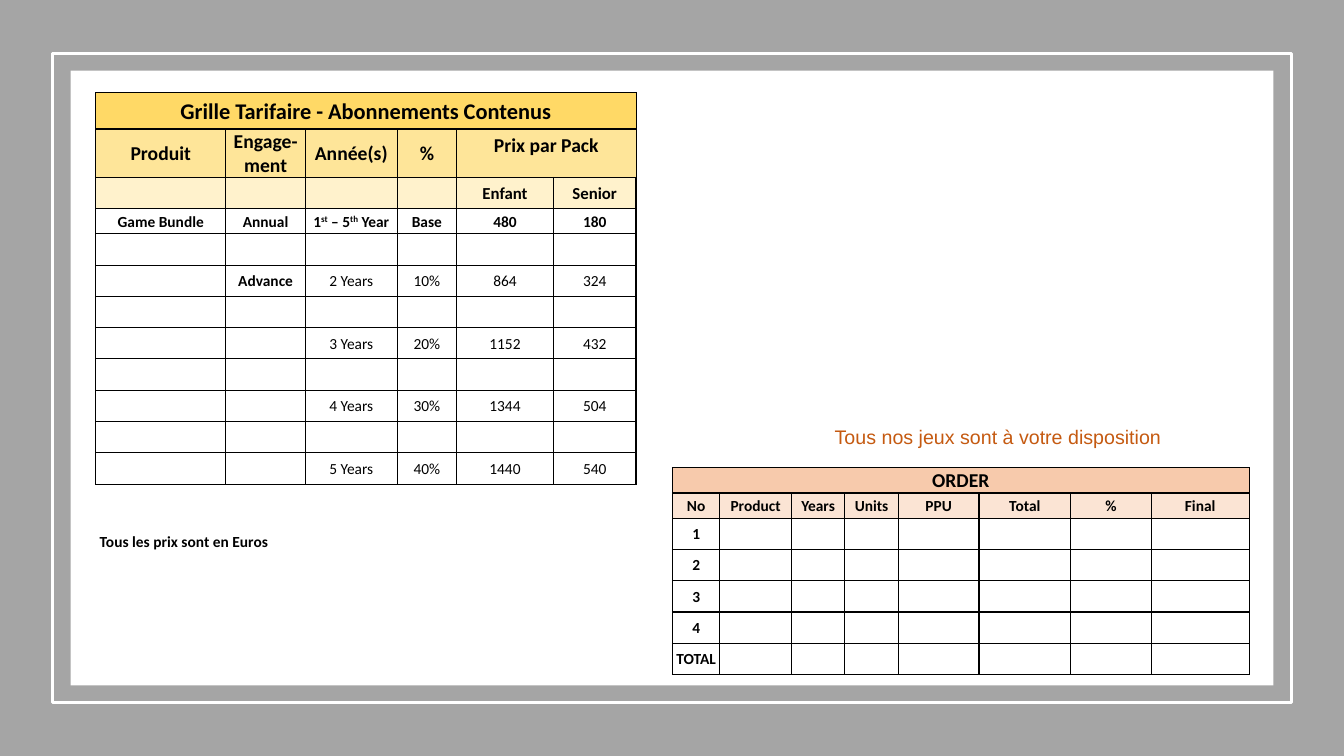
"""Build a slide with a price grid, an order form and two short notes."""
from lxml import etree
from pptx import Presentation
from pptx.dml.color import RGBColor
from pptx.enum.shapes import MSO_SHAPE
from pptx.enum.text import MSO_ANCHOR, PP_ALIGN
from pptx.oxml.ns import qn
from pptx.util import Inches, Pt

RECT = MSO_SHAPE.RECTANGLE
LEFT, MID = PP_ALIGN.LEFT, PP_ALIGN.CENTER
TOP, CENTER = MSO_ANCHOR.TOP, MSO_ANCHOR.MIDDLE
WIDE, HIGH = 13.33, 7.5
HUES = {
    "gray": "A5A5A5", "white": "FFFFFF", "black": "000000", "rust": "C55A11",
    "gold": "FFD966", "sand": "FEE599", "cream": "FFF2CC",
    "peach": "F7CAAC", "blush": "FBE4D4",
}


def hue(name):
    """Return the named colour."""
    return RGBColor.from_string(HUES[name])


def write(frame, text, size=11, bold=True, color="black", face="Calibri", align=MID):
    """Write text into a frame; parts between carets are raised."""
    para = frame.paragraphs[0]
    para.alignment = align
    for i, part in enumerate(text.split("^")):
        run = para.add_run()
        run.text = part
        run.font.size, run.font.bold = Pt(size), bold
        run.font.name, run.font.color.rgb = face, hue(color)
        if i % 2:
            run._r.get_or_add_rPr().set("baseline", "30000")


prs = Presentation()
prs.slide_width, prs.slide_height = Inches(WIDE), Inches(HIGH)
slide = prs.slides.add_slide(prs.slide_layouts[6])

for x, y, fill, line in [(0, 0, "gray", None), (0.52, 0.53, None, "white"),
                         (0.7, 0.7, "white", None)]:
    box = slide.shapes.add_shape(RECT, Inches(x), Inches(y),
                                 Inches(WIDE - 2 * x), Inches(HIGH - 2 * y))
    box.shadow.inherit = False
    if fill:
        box.fill.solid()
        box.fill.fore_color.rgb = hue(fill)
    else:
        box.fill.background()
    if line:
        box.line.color.rgb = hue(line)
        box.line.width = Pt(2)
    else:
        box.line.fill.background()

notes = [
    ("Tous nos jeux sont à votre disposition", (8.18, 4.17, 3.68, 0.34),
     dict(size=14, bold=False, color="rust", face="Arial")),
    ("Tous les prix sont en Euros", (0.89, 5.23, 2.42, 0.29), {}),
]
for text, spot, style in notes:
    frame = slide.shapes.add_textbox(*map(Inches, spot)).text_frame
    frame.word_wrap = True
    write(frame, text, align=LEFT, **style)

order = [["ORDER"], ["No", "Product", "Years", "Units", "PPU", "Total", "%", "Final"]]
order += [[name] for name in ("1", "2", "3", "4", "TOTAL")]

prices = [
    ["Grille Tarifaire - Abonnements Contenus"],
    ["Produit", "Engage-ment", "Année(s)", "%", "Prix par Pack"],
    ["", "", "", "", "Enfant", "Senior"],
    ["Game Bundle", "Annual", "1^st^ – 5^th^ Year", "Base", "480", "180"],
]
plans = [("10%", "864", "324"), ("20%", "1152", "432"),
         ("30%", "1344", "504"), ("40%", "1440", "540")]
for year, plan in enumerate(plans, 2):
    prices += [[], ["", "Advance" if year == 2 else "", f"{year} Years", *plan]]

grids = [
    dict(at=(6.67, 4.64), data=order, thin=1, spans=[(0, 0, 7)],
         cols=[0.47, 0.71, 0.53, 0.53, 0.8, 0.91, 0.8, 0.97],
         rows=[0.25] * 2 + [0.31] * 5, sizes=[14], fills=["peach", "blush"]),
    dict(at=(0.95, 0.92), data=prices, thin=0.75, spans=[(0, 0, 5), (1, 4, 5)],
         cols=[1.29, 0.79, 0.91, 0.59, 0.96, 0.82],
         rows=[0.36, 0.48, 0.31, 0.25] + [0.31] * 8,
         sizes=[16, 14, 12], fills=["gold", "sand", "cream"]),
]
for grid in grids:
    cols, rows, thin = grid["cols"], grid["rows"], grid["thin"]
    x, y = grid["at"]
    table = slide.shapes.add_table(len(rows), len(cols), Inches(x), Inches(y),
                                   Inches(sum(cols)), Inches(sum(rows))).table
    table.first_row = table.horz_banding = False
    for col, width in zip(table.columns, cols):
        col.width = Inches(width)
    for row, height in zip(table.rows, rows):
        row.height = Inches(height)
    for r, first, last in grid["spans"]:
        table.cell(r, first).merge(table.cell(r, last))
    for r in range(len(rows)):
        for c in range(len(cols)):
            cell = table.cell(r, c)
            cell.margin_left = cell.margin_right = cell.margin_top = Inches(0.01)
            cell.margin_bottom = 0
            cell.vertical_anchor = CENTER
            if r < len(grid["fills"]):
                cell.fill.solid()
                cell.fill.fore_color.rgb = hue(grid["fills"][r])
            else:
                cell.fill.background()
            text = grid["data"][r][c] if c < len(grid["data"][r]) else ""
            if text:
                size = grid["sizes"][r] if r < len(grid["sizes"]) else 11
                bold = grid["data"] is order or r < 4 or c < 2
                write(cell.text_frame, text, size=size, bold=bold)
            if text == "Prix par Pack":
                cell.vertical_anchor = TOP
                cell.margin_top = Inches(0.05)
            thick = {"lnL": c == 0, "lnR": c == len(cols) - 1, "lnT": r < 3, "lnB": r < 2}
            props = cell._tc.get_or_add_tcPr()
            for i, (side, heavy) in enumerate(thick.items()):
                edge = etree.Element(qn("a:" + side), w=str(Pt(1 if heavy else thin)))
                paint = etree.SubElement(edge, qn("a:solidFill"))
                etree.SubElement(paint, qn("a:srgbClr"), val=HUES["black"])
                props.insert(i, edge)

prs.save("out.pptx")
